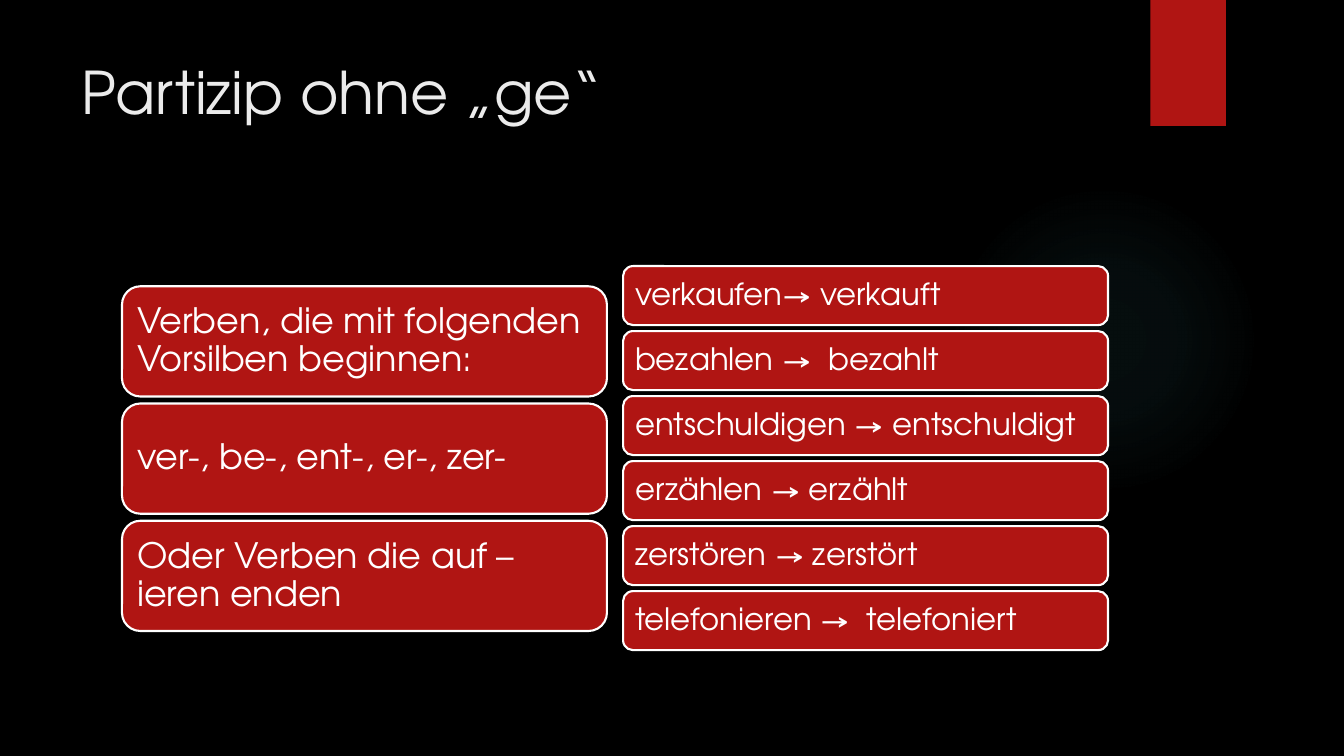
from lxml import etree
from pptx import Presentation
from pptx.dml.color import RGBColor
from pptx.enum.shapes import MSO_SHAPE
from pptx.enum.text import MSO_ANCHOR, MSO_AUTO_SIZE, PP_ALIGN
from pptx.oxml import parse_xml
from pptx.oxml.ns import nsdecls, qn
from pptx.util import Inches, Pt

RECT, ROUND, OVAL = MSO_SHAPE.RECTANGLE, MSO_SHAPE.ROUNDED_RECTANGLE, MSO_SHAPE.OVAL
TOP, MIDDLE = MSO_ANCHOR.TOP, MSO_ANCHOR.MIDDLE
LEFT, NO_FIT = PP_ALIGN.LEFT, MSO_AUTO_SIZE.NONE
FONT = "TeX Gyre Adventor"
RED, WHITE, PALE, GLOW = "B01513", "FFFFFF", "EBEBEB", "50B9C1"

RULES = ["Verben, die mit folgenden Vorsilben beginnen:",
         "ver-, be-, ent-, er-, zer-",
         "Oder Verben die auf –ieren enden"]
EXAMPLES = ["verkaufen→ verkauft", "bezahlen →  bezahlt",
            "entschuldigen → entschuldigt", "erzählen → erzählt",
            "zerstören → zerstört", "telefonieren →  telefoniert"]


def rgb(color):
    """Turn a hex string into a colour."""
    return RGBColor.from_string(color)


def write(sp, text, size, color=WHITE, anchor=MIDDLE, inset=(0.1, 0.1), spacing=1.0):
    """Put one left-aligned paragraph into a shape."""
    tf = sp.text_frame
    tf.word_wrap, tf.auto_size, tf.vertical_anchor = True, NO_FIT, anchor
    tf.margin_left = tf.margin_right = Inches(inset[0])
    tf.margin_top = tf.margin_bottom = Inches(inset[1])
    p = tf.paragraphs[0]
    p.alignment, p.line_spacing = LEFT, spacing
    r = p.add_run()
    r.text = text
    r.font.name, r.font.size, r.font.color.rgb = FONT, Pt(size), rgb(color)


def add_box(s, kind, box, fill=RED, line=None):
    """Add a flat shape with a solid fill and an optional outline."""
    sp = s.shapes.add_shape(kind, *map(Inches, box))
    sp.shadow.inherit = False
    sp.fill.solid()
    sp.fill.fore_color.rgb = rgb(fill)
    if line:
        sp.line.color.rgb, sp.line.width = rgb(line), Pt(1.5)
    else:
        sp.line.fill.background()
    return sp


def add_glow(s, box):
    """Add a faint round glow that fades towards its edge."""
    sp = add_box(s, OVAL, box, GLOW)
    grad = parse_xml(f'<a:gradFill {nsdecls("a")}><a:gsLst/><a:path path="circle">'
                     '<a:fillToRect l="50000" t="50000" r="50000" b="50000"/>'
                     '</a:path></a:gradFill>')
    for pos, alpha in ((0, 7), (36, 6), (69, 0)):
        stop = etree.SubElement(grad[0], qn("a:gs"), pos=str(pos * 1000))
        color = etree.SubElement(stop, qn("a:srgbClr"), val=GLOW)
        etree.SubElement(color, qn("a:alpha"), val=str(alpha * 1000))
    solid = sp._element.spPr.find(qn("a:solidFill"))
    solid.getparent().replace(solid, grad)


def add_title(s, text, box):
    """Place and fill the title placeholder."""
    sp = s.shapes.title
    sp.left, sp.top, sp.width, sp.height = map(Inches, box)
    write(sp, text, 42, PALE, TOP, (0.1, 0.05))


def add_stack(s, texts, box, gap, size, inset):
    """Stack equal rounded cards down the given box."""
    left, top, width, height = box
    card = (height - gap * (len(texts) - 1)) / len(texts)
    for i, text in enumerate(texts):
        sp = add_box(s, ROUND, (left, top + i * (card + gap), width, card), line=WHITE)
        write(sp, text, size, inset=(inset, inset), spacing=0.9)


def main():
    """Build the slide and save it."""
    prs = Presentation()
    prs.slide_width, prs.slide_height = Inches(13.33), Inches(7.5)
    s = prs.slides.add_slide(prs.slide_layouts[5])
    s.background.fill.solid()
    s.background.fill.fore_color.rgb = rgb("000000")
    add_glow(s, (9.41, 1.83, 3.08, 3.08))
    add_box(s, RECT, (11.41, 0, 0.75, 1.25))
    add_title(s, "Partizip ohne „ge“", (0.71, 0.5, 10.29, 1.53))
    add_stack(s, RULES, (1.21, 2.84, 4.81, 3.42), 0.07, 25, 0.1)
    add_stack(s, EXAMPLES, (6.18, 2.64, 4.81, 3.81), 0.06, 22, 0.09)
    prs.save("out.pptx")


if __name__ == "__main__":
    main()
